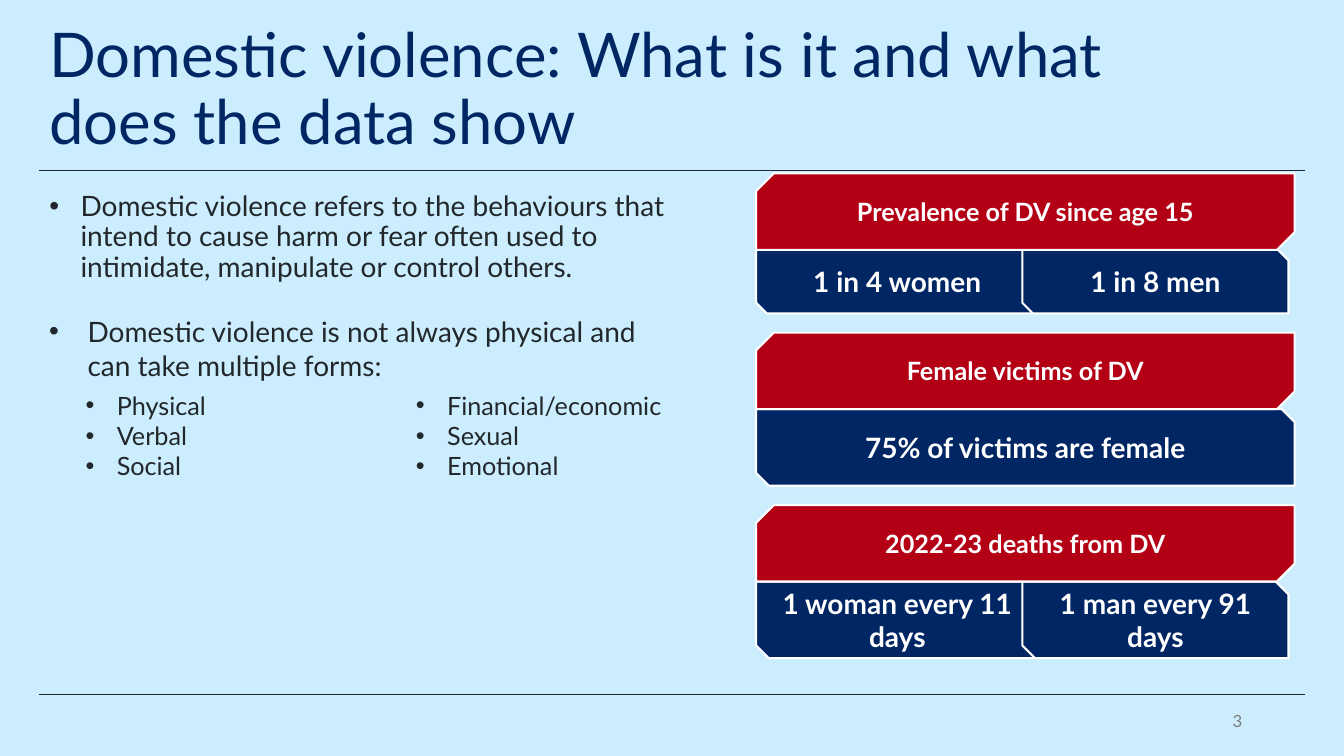
from lxml.etree import SubElement
from pptx import Presentation
from pptx.dml.color import RGBColor
from pptx.enum.shapes import MSO_CONNECTOR, MSO_SHAPE
from pptx.enum.text import MSO_ANCHOR, MSO_AUTO_SIZE, PP_ALIGN
from pptx.oxml.ns import qn
from pptx.util import Inches, Pt

NAVY, RED, INK, WHITE, GREY, SKY = "002664", "B40015", "22272B", "FFFFFF", "7B7C7D", "CBEDFD"
FORMS = ["Physical", "Verbal", "Social", "Financial/economic", "Sexual", "Emotional"]
BANNER_HEIGHT = 0.76
FACTS = [
    (1.72, 0.63, "Prevalence of DV since age 15", ["1 in 4 women", "1 in 8 men"]),
    (3.3, 0.76, "Female victims of DV", ["75% of victims are female"]),
    (5.01, 0.76, "2022-23 deaths from DV", ["1 woman every 11 days", "1 man every 91 days"]),
]


def color(value):
    return RGBColor.from_string(value)


def apply(target, values):
    for name, value in values.items():
        setattr(target, name, value)


def write(shape, lines, size, tint, bold=False, anchor=MSO_ANCHOR.TOP, para_format=None, indent=0):
    frame = shape.text_frame
    apply(frame, {"word_wrap": True, "vertical_anchor": anchor, "auto_size": MSO_AUTO_SIZE.NONE})
    for index, line in enumerate(lines):
        para = frame.add_paragraph() if index else frame.paragraphs[0]
        apply(para, para_format or {})
        span = para.add_run()
        span.text = line
        apply(span.font, {"name": "Lato", "size": Pt(size), "bold": bold})
        span.font.color.rgb = color(tint)
        if indent:
            add_bullet(para, indent)
    return frame


def add_bullet(para, indent):
    properties = para._p.get_or_add_pPr()
    properties.set("marL", str(Inches(indent)))
    properties.set("indent", str(Inches(-indent)))
    SubElement(properties, qn("a:buFont"), typeface="Arial")
    SubElement(properties, qn("a:buChar"), char="•")


def add_text(page, box, lines, size, tint, **options):
    shape = page.shapes.add_textbox(*map(Inches, box))
    return write(shape, lines, size, tint, **options)


def add_panel(page, box, text, size, fill, snips=None):
    panel = page.shapes.add_shape(MSO_SHAPE.SNIP_2_DIAG_RECTANGLE, *map(Inches, box))
    panel.shadow.inherit = False
    panel.fill.solid()
    panel.fill.fore_color.rgb = color(fill)
    panel.line.color.rgb = color(WHITE)
    panel.line.width = Pt(1.5)
    for index, snip in enumerate(snips or []):
        panel.adjustments[index] = snip
    write(panel, [text], size, WHITE, bold=True, anchor=MSO_ANCHOR.MIDDLE,
          para_format={"alignment": PP_ALIGN.CENTER})


def add_rule(page, left, top, width):
    rule = page.shapes.add_connector(
        MSO_CONNECTOR.STRAIGHT, *map(Inches, (left, top, left + width, top)))
    rule.line.color.rgb = color(INK)
    rule.line.width = Pt(1)
    SubElement(rule._element.spPr, qn("a:effectLst"))


def add_title(page, box, text):
    title = page.shapes.title
    apply(title, dict(zip(("left", "top", "width", "height"), map(Inches, box))))
    write(title, [text], 44, NAVY, anchor=MSO_ANCHOR.MIDDLE,
          para_format={"alignment": PP_ALIGN.LEFT, "line_spacing": 0.9})


def add_definition(page, left, top):
    add_text(page, (left, top, 6.75, 1.1),
             ["Domestic violence refers to the behaviours that intend to cause harm or fear "
              "often used to intimidate, manipulate or control others."],
             20, INK, para_format={"line_spacing": 0.9, "space_before": Pt(5)}, indent=0.31)
    intro = add_text(page, (left, top + 1.21, 6.17, 0.77),
                     ["Domestic violence is not always physical and can take multiple forms:"],
                     20, INK, indent=0.38)
    forms = add_text(page, (left + 0.36, top + 1.96, 6.75, 1.01), FORMS, 18, INK, indent=0.31)
    forms._txBody.bodyPr.set("numCol", "2")
    for frame in (intro, forms):
        frame.auto_size = MSO_AUTO_SIZE.SHAPE_TO_FIT_TEXT


def add_fact(page, left, top, width, height, heading, figures):
    row = top + BANNER_HEIGHT
    if len(figures) == 1:
        spans = [(0, width)]
    else:
        spans = [(0, 2.8), (2.64, 2.64)]
    for (offset, span_width), figure in zip(spans, figures):
        add_panel(page, (left + offset, row, span_width, height), figure, 20, NAVY)
    add_panel(page, (left, top, width, BANNER_HEIGHT), heading, 18, RED, snips=(0.231, 0))


def main():
    deck = Presentation()
    apply(deck, {"slide_width": Inches(13.33), "slide_height": Inches(7.5)})
    page = deck.slides.add_slide(deck.slide_layouts[5])
    page.background.fill.solid()
    page.background.fill.fore_color.rgb = color(SKY)
    for top in (1.69, 6.89):
        add_rule(page, 0.39, top, 12.55)
    add_title(page, (0.39, 0.18, 11.5, 1.45),
              "Domestic violence: What is it and what does the data show")
    add_definition(page, 0.39, 1.86)
    for top, height, heading, figures in FACTS:
        add_fact(page, 7.5, top, 5.34, height, heading, figures)
    add_text(page, (9.42, 6.95, 3, 0.4), ["3"], 12, GREY, anchor=MSO_ANCHOR.MIDDLE,
             para_format={"alignment": PP_ALIGN.RIGHT})
    deck.save("out.pptx")


if __name__ == "__main__":
    main()
